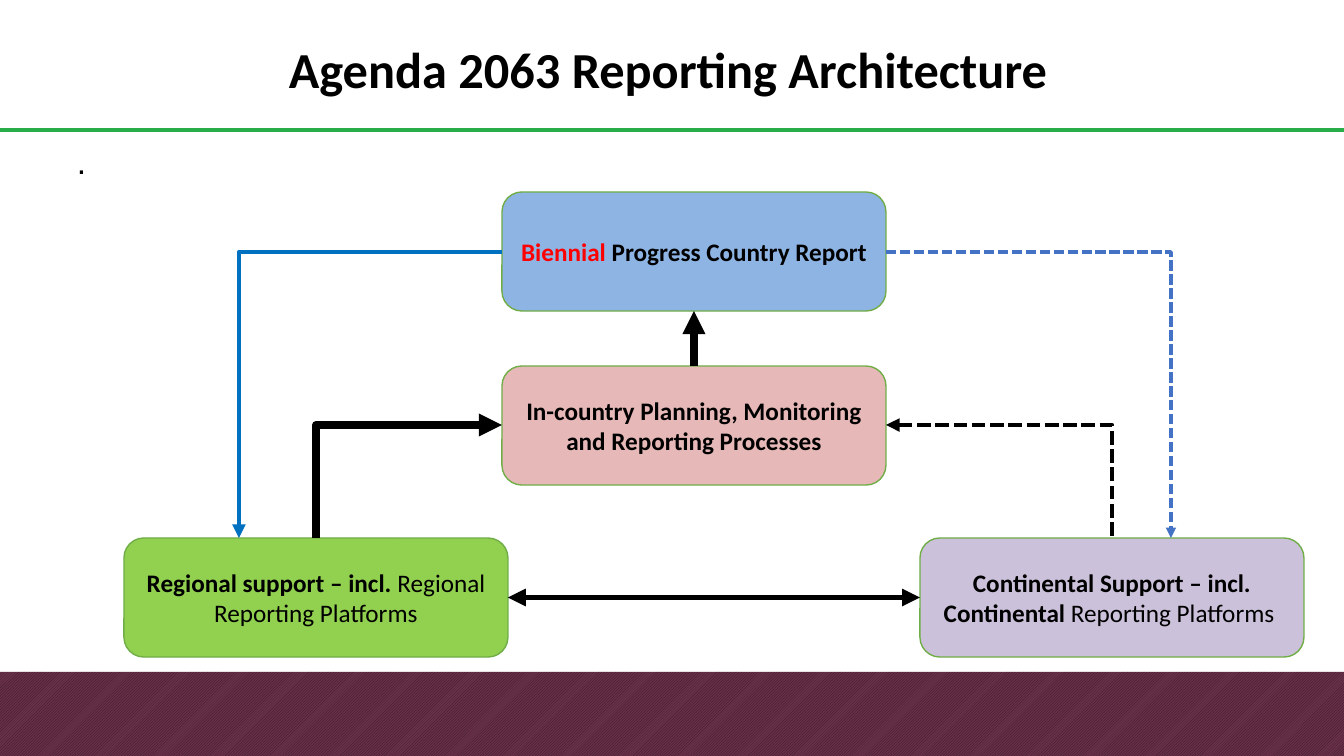
from dataclasses import dataclass

from lxml import etree
from pptx import Presentation
from pptx.dml.color import RGBColor
from pptx.enum.dml import MSO_LINE, MSO_PATTERN
from pptx.enum.shapes import MSO_CONNECTOR, MSO_SHAPE
from pptx.enum.text import MSO_ANCHOR, MSO_AUTO_SIZE, PP_ALIGN
from pptx.oxml.ns import qn
from pptx.util import Pt

STRAIGHT, ELBOW = MSO_CONNECTOR.STRAIGHT, MSO_CONNECTOR.ELBOW
DASHED = MSO_LINE.SQUARE_DOT
TOP, LEFT, BOTTOM, RIGHT = range(4)


@dataclass(frozen=True)
class Theme:
    black: RGBColor = RGBColor.from_string("000000")
    red: RGBColor = RGBColor.from_string("FF0000")
    rule: RGBColor = RGBColor.from_string("29AD48")
    outline: RGBColor = RGBColor.from_string("70AD47")
    report: RGBColor = RGBColor.from_string("8EB4E3")
    country: RGBColor = RGBColor.from_string("E6B9B8")
    regional: RGBColor = RGBColor.from_string("92D050")
    continental: RGBColor = RGBColor.from_string("CCC1DA")
    blue: RGBColor = RGBColor.from_string("0070C0")
    pale_blue: RGBColor = RGBColor.from_string("4472C4")
    band: RGBColor = RGBColor.from_string("663148")
    band_stripe: RGBColor = RGBColor.from_string("391123")
    font: str = "Calibri"
    body_font: str = "Arial"
    title_size: Pt = Pt(36)
    body_size: Pt = Pt(24)
    box_size: Pt = Pt(18)


theme = Theme()


def px(*lengths):
    return [round(length * 12192000 / 1344) for length in lengths]


def add_line(kind, ends, color, width, dash=None, arrows=()):
    """Draw a connector; arrows names the ends that carry a triangle."""
    line = slide.shapes.add_connector(kind, *px(*ends))
    line.line.color.rgb = color
    line.line.width = Pt(width)
    if dash:
        line.line.dash_style = dash
    properties = line._element.spPr
    outline = properties.find(qn("a:ln"))
    for end in arrows:
        etree.SubElement(outline, qn(f"a:{end}"), type="triangle")
    etree.SubElement(properties, qn("a:effectLst"))
    if kind == ELBOW:  # one bend: across, then down
        properties.find(qn("a:prstGeom")).set("prst", "bentConnector2")
    return line


presentation = Presentation()
presentation.slide_width, presentation.slide_height = px(1344, 756)
slide = presentation.slides.add_slide(presentation.slide_layouts[6])

# Footer band and title rule
band = slide.shapes.add_shape(MSO_SHAPE.RECTANGLE, *px(0, 672, 1344, 84))
band.shadow.inherit = False
band.fill.patterned()
band.fill.pattern = MSO_PATTERN.DARK_UPWARD_DIAGONAL
band.fill.fore_color.rgb = theme.band_stripe
band.fill.back_color.rgb = theme.band
band.line.fill.background()
add_line(STRAIGHT, (0, 130, 1344, 130), theme.rule, 3)

# Title
title = slide.shapes.add_textbox(*px(279, 33, 788, 72)).text_frame
title.word_wrap = False
title.auto_size = MSO_AUTO_SIZE.SHAPE_TO_FIT_TEXT
paragraph = title.paragraphs[0]
paragraph.text = "Agenda 2063 Reporting Architecture"
paragraph.font.name = theme.font
paragraph.font.size = theme.title_size
paragraph.font.bold = True
paragraph.font.color.rgb = theme.black

# Body text
body = slide.shapes.add_textbox(*px(67, 140, 1253, 528)).text_frame
body.word_wrap = True
paragraph = body.paragraphs[0]
paragraph.text = "."
paragraph.line_spacing = 0.9
paragraph.font.name = theme.body_font
paragraph.font.size = theme.body_size
paragraph.font.color.rgb = theme.black

# Boxes: left, top, fill, runs of (text, bold, color)
box_specs = {
    "regional": (124, 538, theme.regional, [
        ("Regional support – incl. ", True, theme.black),
        ("Regional Reporting Platforms", False, theme.black)]),
    "country": (502, 366, theme.country, [
        ("In-country Planning, Monitoring and Reporting Processes", True, theme.black)]),
    "continental": (920, 538, theme.continental, [
        ("Continental Support – incl. Continental", True, theme.black),
        (" Reporting Platforms ", False, theme.black)]),
    "report": (502, 192, theme.report, [
        ("Biennial", True, theme.red),
        (" Progress Country Report", True, theme.black)]),
}
boxes = {}
for name, (left, top, fill, runs) in box_specs.items():
    box = slide.shapes.add_shape(MSO_SHAPE.ROUNDED_RECTANGLE, *px(left, top, 384, 119))
    box.shadow.inherit = False
    box.fill.solid()
    box.fill.fore_color.rgb = fill
    box.line.color.rgb = theme.outline
    box.line.width = Pt(1)
    box.text_frame.word_wrap = True
    box.text_frame.vertical_anchor = MSO_ANCHOR.MIDDLE
    paragraph = box.text_frame.paragraphs[0]
    paragraph.alignment = PP_ALIGN.CENTER
    paragraph.font.name = theme.font
    paragraph.font.size = theme.box_size
    for text, bold, color in runs:
        run = paragraph.add_run()
        run.text = text
        run.font.bold = bold
        run.font.color.rgb = color
    boxes[name] = box

# Elbow arrows, each from a box side across and down to a support box
for ends, color, width, dash, arrow in [
    ((502, 425, 316, 538), theme.black, 5.5, None, "headEnd"),
    ((886, 425, 1112, 538), theme.black, 3.25, DASHED, "headEnd"),
    ((502, 252, 239, 538), theme.blue, 3.25, None, "tailEnd"),
    ((886, 252, 1171, 538), theme.pale_blue, 2.5, DASHED, "tailEnd"),
]:
    add_line(ELBOW, ends, color, width, dash, [arrow])

# Straight arrows between boxes
for ends, width, arrows, start, start_side, finish, finish_side in [
    ((694, 366, 694, 311), 5.5, ["tailEnd"], "country", TOP, "report", BOTTOM),
    ((920, 598, 508, 598), 4.25, ["headEnd", "tailEnd"],
     "continental", LEFT, "regional", RIGHT),
]:
    arrow = add_line(STRAIGHT, ends, theme.black, width, arrows=arrows)
    arrow.begin_connect(boxes[start], start_side)
    arrow.end_connect(boxes[finish], finish_side)

presentation.save("out.pptx")
